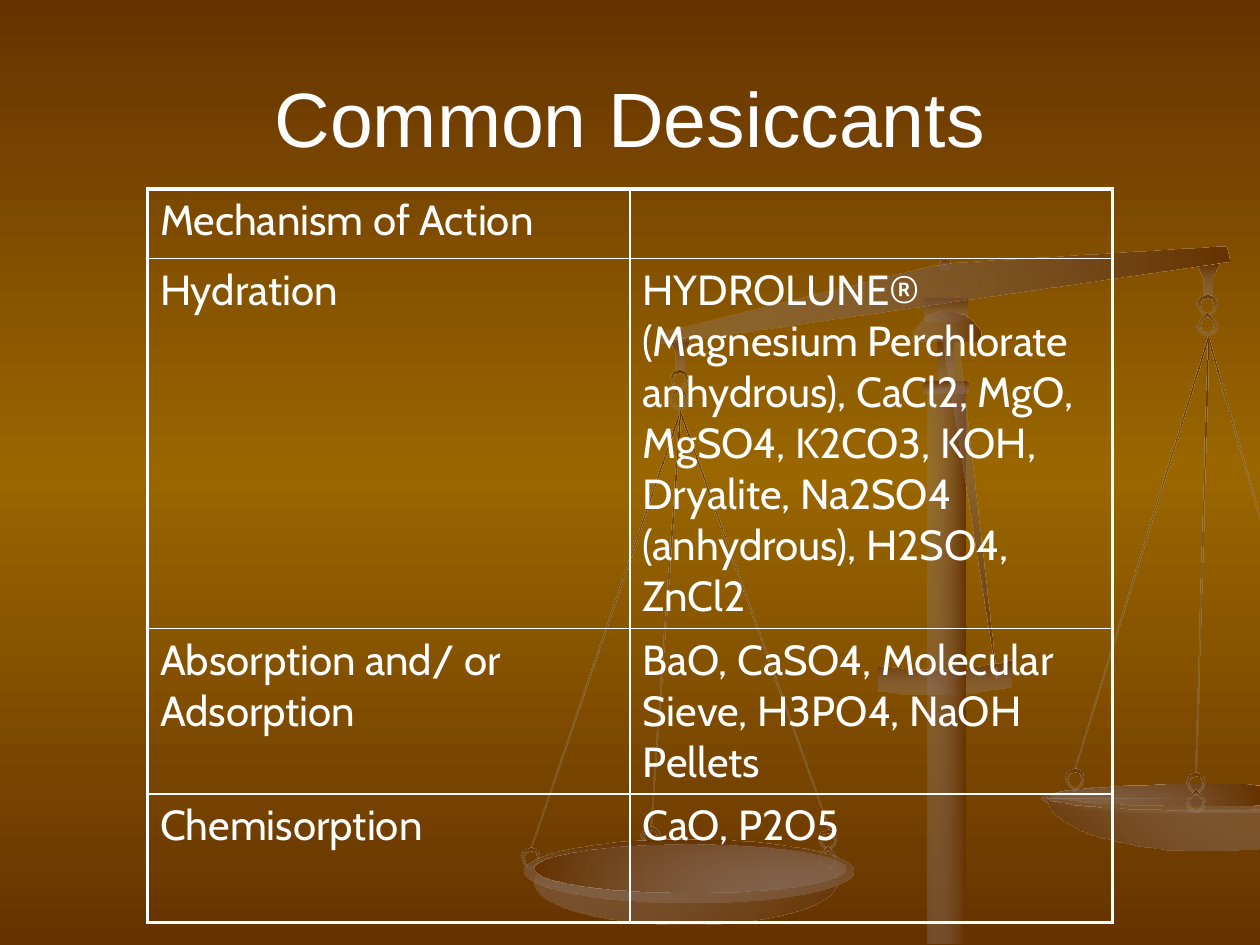
from copy import deepcopy
from math import atan2, cos, degrees, hypot, radians, sin

from lxml.etree import SubElement
from pptx import Presentation
from pptx.dml.color import RGBColor
from pptx.enum.shapes import MSO_SHAPE
from pptx.enum.text import MSO_ANCHOR, PP_ALIGN
from pptx.oxml.ns import qn
from pptx.util import Inches, Pt

BROWN, TAUPE, GOLD, WHITE = "663300", "937F79", "996600", "FFFFFF"
COLUMNS, ROWS = 1000, 750
DOWN = (BROWN, TAUPE, 90)
RIGHT = (TAUPE, BROWN, 0)
DIAGONAL = (TAUPE, BROWN, 45)
RISING = (BROWN, TAUPE, 315)
RECTANGLE, OVAL, ROUNDED = MSO_SHAPE.RECTANGLE, MSO_SHAPE.OVAL, MSO_SHAPE.ROUNDED_RECTANGLE


def write_text(frame, text, font, size, color, align=PP_ALIGN.LEFT, before=0):
    paragraph = frame.paragraphs[0]
    paragraph.alignment = align
    paragraph.space_before = Pt(before)
    run = paragraph.add_run()
    run.text = text
    run.font.name = font
    run.font.size = Pt(size)
    run.font.color.rgb = RGBColor.from_string(color)


def arc(left, top, width, height, start=0, end=360, steps=48):
    angles = [radians(start + (end - start) * step / steps) for step in range(steps + 1)]
    return [(min(left + width * (1 + cos(angle)) / 2, COLUMNS),
             top + height * (1 + sin(angle)) / 2) for angle in angles]


presentation = Presentation()
presentation.slide_width, presentation.slide_height = Inches(10), Inches(7.5)
unit = presentation.slide_width // COLUMNS
slide = presentation.slides.add_slide(presentation.slide_layouts[5])

background = slide.background.fill
background.gradient()
background.gradient_angle = 270
stop_list = next(slide.element.iter(qn("a:gsLst")))
stop_list.insert(1, deepcopy(stop_list[0]))
for stop, color, position in zip(background.gradient_stops, (BROWN, GOLD, BROWN), (0, 0.5, 1)):
    stop.color.rgb = RGBColor.from_string(color)
    stop.position = position

presets = {"pivot": [(RECTANGLE, 734, 237, 34, 18, 0, DOWN), (OVAL, 746, 206, 8, 8, 0, DOWN)]}
outlines = {}

hook_outline = [(18, 0), (0, 2), (5, 12), (5, 26), (12, 26), (12, 11)]
cord_ends_by_hook = {
    (531, 268): [(421, 673, 1), (516, 656, 1), (657, 658, 2)],
    (950, 209): [(853, 610, 1), (949, 613, 2), (1000, 415, 0)],
}
drop_outline = [(0.5, 1), (0.85, 0.72), (1, 0.4), (0.85, 0.12), (0.5, 0),
                (0.15, 0.12), (0, 0.4), (0.15, 0.72)]
link_width, link_height, link_step, link_hole = 15, 18, 14, 0.72
presets["cords"], outlines["hooks"], outlines["links"] = [], [], []

for (hook_left, hook_top), cord_ends in cord_ends_by_hook.items():
    outlines["hooks"].append(([[(hook_left + x, hook_top + y) for x, y in hook_outline]], DOWN))
    cord_x, cord_y = hook_left + 8, hook_top + 58
    chains = [(cord_x, hook_top + 25, 2)]
    for end_x, end_y, link_count in cord_ends:
        run, fall = end_x - cord_x, end_y - cord_y
        length = hypot(run, fall)
        presets["cords"].append((RECTANGLE, (cord_x + end_x) / 2, (cord_y + end_y - length) / 2,
                                 1, length, -degrees(atan2(run, fall)), DOWN))
        chains.append((end_x, end_y, link_count))
    for chain_x, chain_top, link_count in chains:
        for link_index in range(link_count):
            contours = []
            middle = chain_top + link_index * link_step + link_height / 2
            tip_direction = 1 if link_index == 0 else -1
            for scale in (1, link_hole):
                contours.append([(chain_x + (x - 0.5) * scale * link_width,
                                  middle + (y - 0.5) * scale * link_height * tip_direction)
                                 for x, y in drop_outline])
            outlines["links"].append((contours, DOWN))

right_pan_bowl = arc(831, 591, 253, 84, 0, 180) + arc(831, 623, 253, 20, 180, 0)
outlines["right pan"] = [
    ([arc(827, 623, 261, 22)], DOWN),
    ([right_pan_bowl], RISING),
    ([arc(834, 623, 247, 16)], RIGHT),
]

collar_left, collar_width, collar_height, collar_tilt, collar_sag = 697, 106, 20, 4, 5
collar_top = []
for step in range(13):
    share = step / 12
    sag = 4 * collar_sag * share * (1 - share)
    collar_top.append((collar_left + collar_width * share, 528 - collar_tilt * share + sag))
collar_bottom = [(x, y + collar_height) for x, y in reversed(collar_top)]
outlines["collar"] = [([collar_top + collar_bottom], DOWN)]

beam = [(973, 196), (976, 208), (525, 273), (524, 264), (737, 212), (759, 209)]
outlines["beam"] = [([beam], RIGHT)]

presets["left pan"] = [
    (OVAL, 424, 666, 240, 68, 0, DIAGONAL),
    (OVAL, 416, 666, 261, 50, 0, DOWN),
    (OVAL, 424, 670, 247, 38, 0, (BROWN, TAUPE, 0)),
]
presets["column"] = [
    (RECTANGLE, 736, 308, 30, 441, 0, RIGHT),
    (RECTANGLE, 744, 268, 13, 42, 0, DOWN),
    (ROUNDED, 733, 303, 36, 9, 0, DOWN),
]
outlines["pointer"] = [([[(791, 539), (748, 268), (760, 265)]], DIAGONAL)]
outlines["column cap"] = [([arc(724, 247, 55, 48, 180, 360)], RIGHT)]

painted_shapes = []
for part in ("pivot", "cords", "collar", "right pan", "hooks", "links", "beam",
             "left pan", "column", "pointer", "column cap"):
    for kind, left, top, width, height, rotation, gradient in presets.get(part, []):
        box = [round(unit * length) for length in (left, top, width, height)]
        shape = slide.shapes.add_shape(kind, *box)
        shape.rotation = rotation
        painted_shapes.append((shape, gradient))
    for contours, gradient in outlines.get(part, []):
        builder = slide.shapes.build_freeform(*contours[0][0], scale=unit)
        for contour in contours:
            if contour is not contours[0]:
                builder.move_to(*contour[0])
            builder.add_line_segments(contour[1:], close=True)
        painted_shapes.append((builder.convert_to_shape(), gradient))

for shape, (start, end, angle) in painted_shapes:
    shape.shadow.inherit = False
    shape.line.fill.background()
    shape.fill.gradient()
    shape.fill.gradient_angle = (360 - angle) % 360
    for stop, color in zip(shape.fill.gradient_stops, (start, end)):
        stop.color.rgb = RGBColor.from_string(color)
    for color in shape.element.iter(qn("a:srgbClr")):
        if color.get("val") == TAUPE:
            SubElement(color, qn("a:alpha")).set("val", "30000")

title = slide.shapes.title
title.left, title.top = unit * 50, unit * 30
title.width, title.height = unit * (COLUMNS - 2 * 50), unit * ROWS // 6
title.text_frame.vertical_anchor = MSO_ANCHOR.MIDDLE
write_text(title.text_frame, "Common Desiccants", font="Arial", size=44, color=WHITE,
           align=PP_ALIGN.CENTER)
slide.shapes.element.append(title.element)

rows = [
    (55, "Mechanism of Action", ""),
    (124, "Hydration", "HYDROLUNE® (Magnesium Perchlorate anhydrous), CaCl2, MgO, MgSO4, "
                       "K2CO3, KOH, Dryalite, Na2SO4 (anhydrous), H2SO4, ZnCl2"),
    (102, "Absorption and/ or Adsorption", "BaO, CaSO4, Molecular Sieve, H3PO4, NaOH Pellets"),
    (102, "Chemisorption", "CaO, P2O5"),
]
table_height = unit * 577
table_frame = slide.shapes.add_table(len(rows), 2, unit * 117, unit * 150, unit * 766, table_height)
table = table_frame.table
table.first_row = table.horz_banding = False
for row_index, (row_height, *texts) in enumerate(rows):
    table.rows[row_index].height = unit * row_height
    for column_index, text in enumerate(texts):
        cell = table.cell(row_index, column_index)
        if text:
            write_text(cell.text_frame, text, font="Cabin", size=24, color=WHITE, before=4.8)
        outer_sides = {"a:lnL": column_index == 0, "a:lnR": column_index == 1,
                       "a:lnT": row_index == 0, "a:lnB": row_index == len(rows) - 1}
        properties = cell._tc.get_or_add_tcPr()
        for side, is_outer in outer_sides.items():
            border = SubElement(properties, qn(side), w=str(Pt(2.25 if is_outer else 1)))
            SubElement(SubElement(border, qn("a:solidFill")), qn("a:srgbClr"), val=WHITE)
        cell.fill.background()
table_frame.height = table_height

presentation.save("out.pptx")
